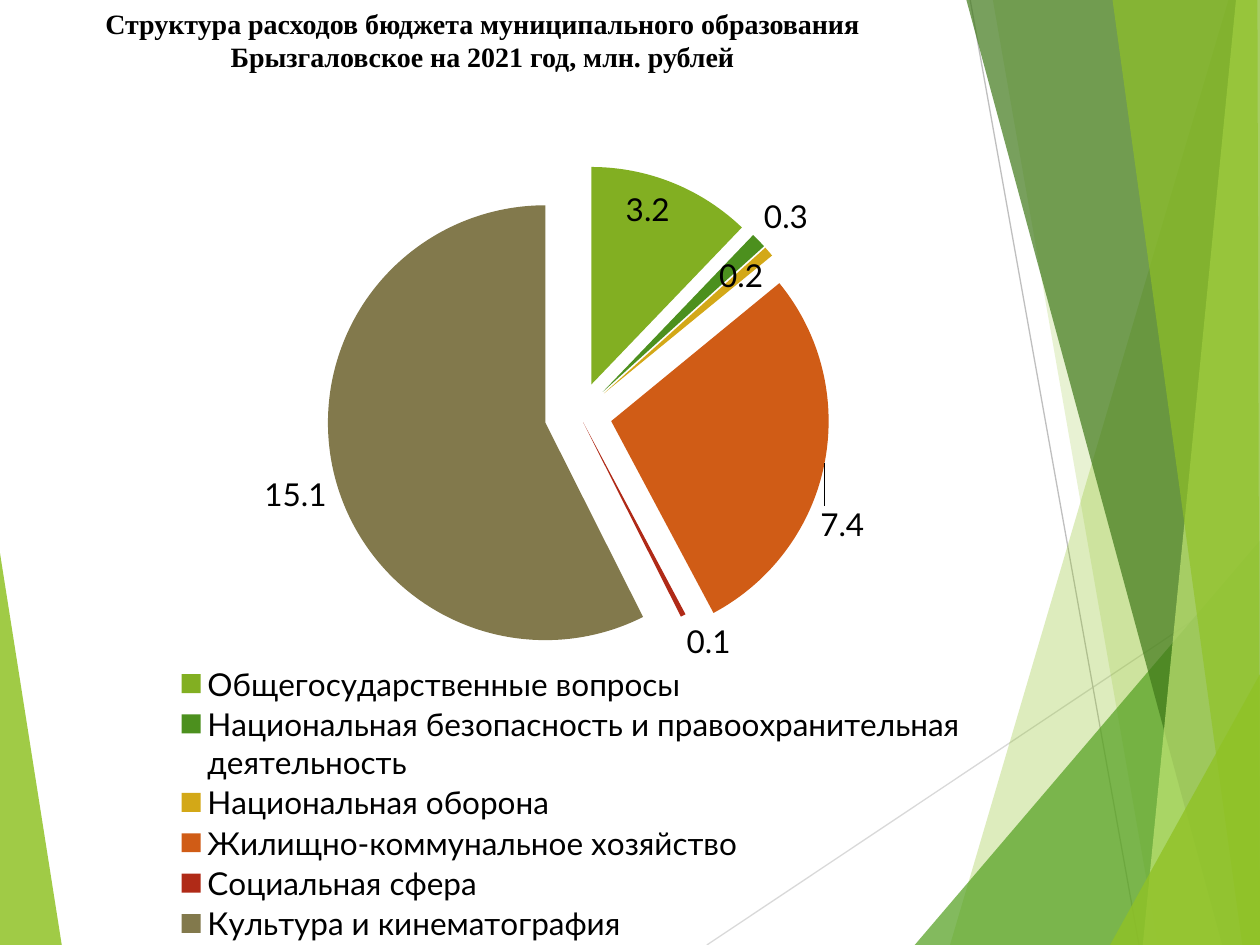
"""Build the slide on municipal spending: a title, a pie chart and a faceted side ornament."""
from pptx import Presentation
from pptx.chart.data import CategoryChartData
from pptx.dml.color import RGBColor
from pptx.enum.chart import XL_CHART_TYPE as ChartType, XL_LABEL_POSITION as Place, XL_LEGEND_POSITION as LegendPlace
from pptx.enum.shapes import MSO_CONNECTOR as Connector
from pptx.enum.text import MSO_ANCHOR as Anchor, PP_ALIGN as Align
from pptx.oxml import parse_xml
from pptx.oxml.ns import nsdecls, qn
from pptx.util import Inches, Pt

WIDTH, HEIGHT = 10, 7.5
BLACK = RGBColor(0, 0, 0)
WHITE = RGBColor(255, 255, 255)
LIME = RGBColor(0x90, 0xC2, 0x26)
GREEN = RGBColor(0x54, 0xA0, 0x21)
FOREST = RGBColor(0x3F, 0x78, 0x19)
PALE = RGBColor(0xC0, 0xE4, 0x74)
GOLD = RGBColor(0xE6, 0xB9, 0x1E)
ORANGE = RGBColor(0xE7, 0x66, 0x18)
RED = RGBColor(0xC4, 0x2F, 0x1A)
OLIVE = RGBColor(0x91, 0x86, 0x55)
SILVER = RGBColor(0xD9, 0xD9, 0xD9)
GRAY = RGBColor(0xBF, 0xBF, 0xBF)

TITLE = "Структура расходов бюджета муниципального образования Брызгаловское на 2021 год, млн. рублей"
SPENDING = [
    ("Общегосударственные вопросы", 3.2, LIME, 15, Place.INSIDE_END),
    ("Национальная безопасность и правоохранительная деятельность", 0.3, GREEN, 15, Place.OUTSIDE_END),
    ("Национальная оборона", 0.2, GOLD, 15, Place.INSIDE_END),
    ("Жилищно-коммунальное хозяйство", 7.4, ORANGE, 15, Place.OUTSIDE_END),
    ("Социальная сфера", 0.1, RED, 4, Place.OUTSIDE_END),
    ("Культура и кинематография", 15.1, OLIVE, 16, Place.OUTSIDE_END),
]
MOVED_LABEL = (3, -0.01, 0.05)
PLOT_AREA = (0.317, 0.063, 0.381, 0.561)
LEGEND_AREA = (0.14, 0.65, 0.72, 0.35)

LEFT_FACET = ([(0, 4.39), (0.49, HEIGHT), (0, HEIGHT)], LIME, 85)
RAYS = [((5.61, HEIGHT), (WIDTH, 4.57), SILVER), ((7.7, 0), (9.04, HEIGHT), GRAY)]
RIGHT_FACETS = [
    ([(9.75, 0), (7.54, HEIGHT), (WIDTH, HEIGHT), (WIDTH, 0)], LIME, 30),
    ([(7.88, 0), (9.19, HEIGHT), (WIDTH, HEIGHT), (WIDTH, 0)], LIME, 20),
    ([(7.26, HEIGHT), (WIDTH, 4.29), (WIDTH, HEIGHT)], GREEN, 72),
    ([(7.67, 0), (9.7, HEIGHT), (WIDTH, HEIGHT), (WIDTH, 0)], FOREST, 70),
    ([(9.81, 0), (9.07, HEIGHT), (WIDTH, HEIGHT), (WIDTH, 0)], PALE, 70),
    ([(8.83, 0), (9.86, HEIGHT), (WIDTH, HEIGHT), (9.98, 0)], LIME, 65),
    ([(8.81, HEIGHT), (WIDTH, 5.35), (WIDTH, HEIGHT)], LIME, 80),
]


def write_text(frame, text, *, font, size, color, bold=False, align=Align.LEFT):
    para = frame.paragraphs[0]
    para.alignment = align
    span = para.add_run()
    span.text = text
    span.font.name, span.font.size, span.font.bold = font, Pt(size), bold
    span.font.color.rgb = color


def add_facet(page, points, color, opacity):
    corners = [(Inches(x), Inches(y)) for x, y in points]
    builder = page.shapes.build_freeform(*corners[0])
    builder.add_line_segments(corners[1:], close=True)
    facet = builder.convert_to_shape()
    facet.shadow.inherit = False
    facet.fill.solid()
    facet.fill.fore_color.rgb = color
    facet.line.fill.background()
    tint = facet._element.spPr.find(".//" + qn("a:srgbClr"))
    tint.append(parse_xml(f'<a:alpha {nsdecls("a")} val="{opacity * 1000}"/>'))


def add_ray(page, start, end, color):
    ray = page.shapes.add_connector(Connector.STRAIGHT, *map(Inches, start + end))
    ray.line.color.rgb = color
    ray.line.width = Pt(0.75)
    ray._element.spPr.append(parse_xml(f'<a:effectLst {nsdecls("a")}/>'))


def set_layout(parent, index, modes, **shares):
    for old in parent.findall(qn("c:layout")):
        parent.remove(old)
    parts = modes + "".join(f'<c:{key} val="{share}"/>' for key, share in shares.items())
    xml = f'<c:layout {nsdecls("c")}><c:manualLayout>{parts}</c:manualLayout></c:layout>'
    parent.insert(index, parse_xml(xml))


def add_pie(page):
    names, amounts, colors, offsets, places = zip(*SPENDING)
    data = CategoryChartData(number_format="0.0")
    data.categories = names
    data.add_series("Series 1", amounts)
    area = map(Inches, (0, 1.09, 9.06, 6.41))
    chart = page.shapes.add_chart(ChartType.PIE, *area, data).chart
    chart.has_title = False
    chart.font.name, chart.font.size = "Lato", Pt(18)
    chart.font.color.rgb = BLACK
    chart.has_legend = True
    chart.legend.position = LegendPlace.BOTTOM
    chart.legend.include_in_layout = False
    plot = chart.plots[0]
    plot.vary_by_categories = True
    plot.has_data_labels = True
    plot.data_labels.number_format = "0.0"
    plot.data_labels.number_format_is_linked = False
    series = plot.series[0]
    for index, color in enumerate(colors):
        point = series.points[index]
        point.format.fill.solid()
        point.format.fill.fore_color.rgb = color
        point.format.fill.fore_color.brightness = -0.1
        point.format.line.fill.background()
        point.data_label.position = places[index]
    for slice_xml, offset in zip(series._element.findall(qn("c:dPt")), offsets):
        explosion = parse_xml(f'<c:explosion {nsdecls("c")} val="{offset}"/>')
        slice_xml.find(qn("c:spPr")).addprevious(explosion)

    edges = '<c:xMode val="edge"/><c:yMode val="edge"/>'
    inner = '<c:layoutTarget val="inner"/>' + edges
    plot_xml = chart._chartSpace.find(".//" + qn("c:plotArea"))
    set_layout(plot_xml, 0, inner, **dict(zip("xywh", PLOT_AREA)))
    set_layout(chart.legend._element, 1, edges, **dict(zip("xywh", LEGEND_AREA)))
    moved, dx, dy = MOVED_LABEL
    label = series._element.findall(".//" + qn("c:dLbl"))[moved]
    set_layout(label, 1, "", x=dx, y=dy)


def main():
    deck = Presentation()
    deck.slide_width, deck.slide_height = Inches(WIDTH), Inches(HEIGHT)
    page = deck.slides.add_slide(deck.slide_layouts[5])
    page.background.fill.solid()
    page.background.fill.fore_color.rgb = WHITE
    add_facet(page, *LEFT_FACET)
    for ray in RAYS:
        add_ray(page, *ray)
    for facet in RIGHT_FACETS:
        add_facet(page, *facet)
    title = page.shapes.title
    title._element.getparent().append(title._element)
    title.left, title.top, title.width, title.height = map(Inches, (0, 0, 7.66, 1.09))
    title.text_frame.word_wrap = True
    title.text_frame.vertical_anchor = Anchor.TOP
    write_text(title.text_frame, TITLE, font="Times New Roman", size=16, color=BLACK, bold=True, align=Align.CENTER)
    add_pie(page)
    deck.save("out.pptx")


if __name__ == "__main__":
    main()
